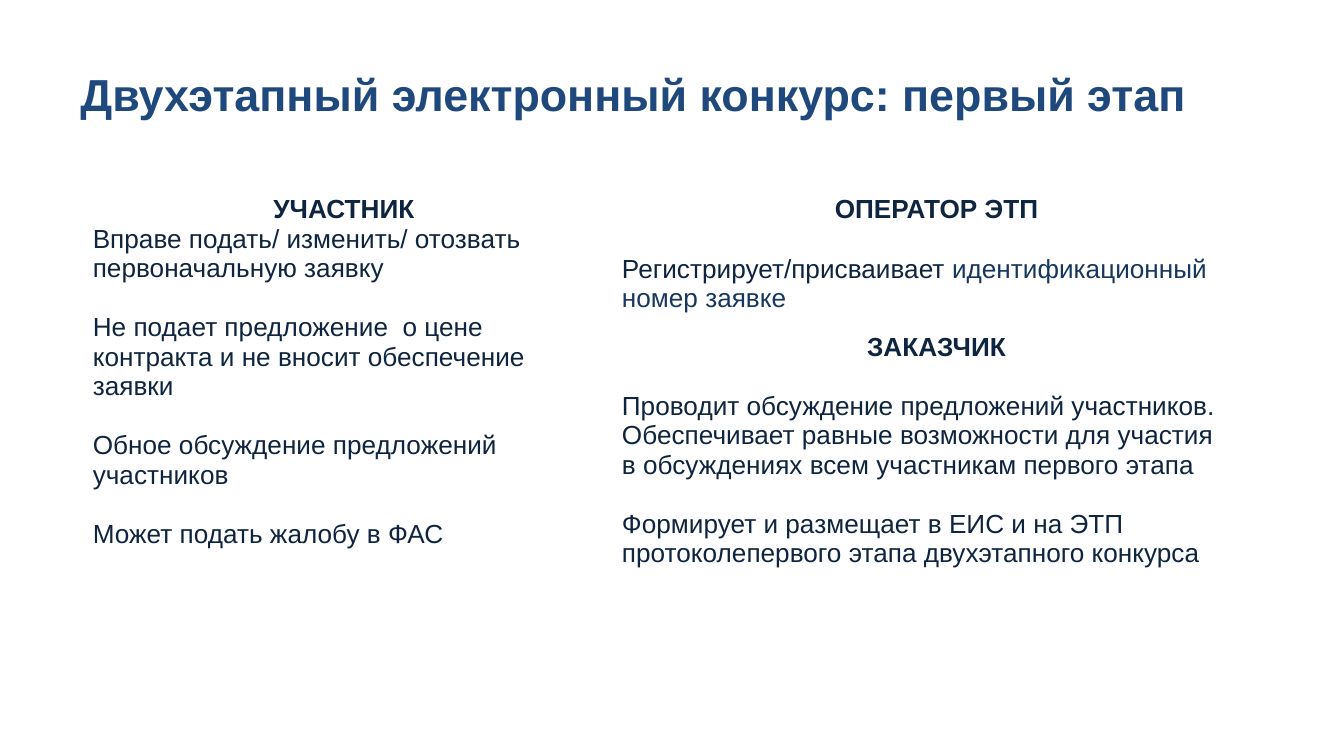
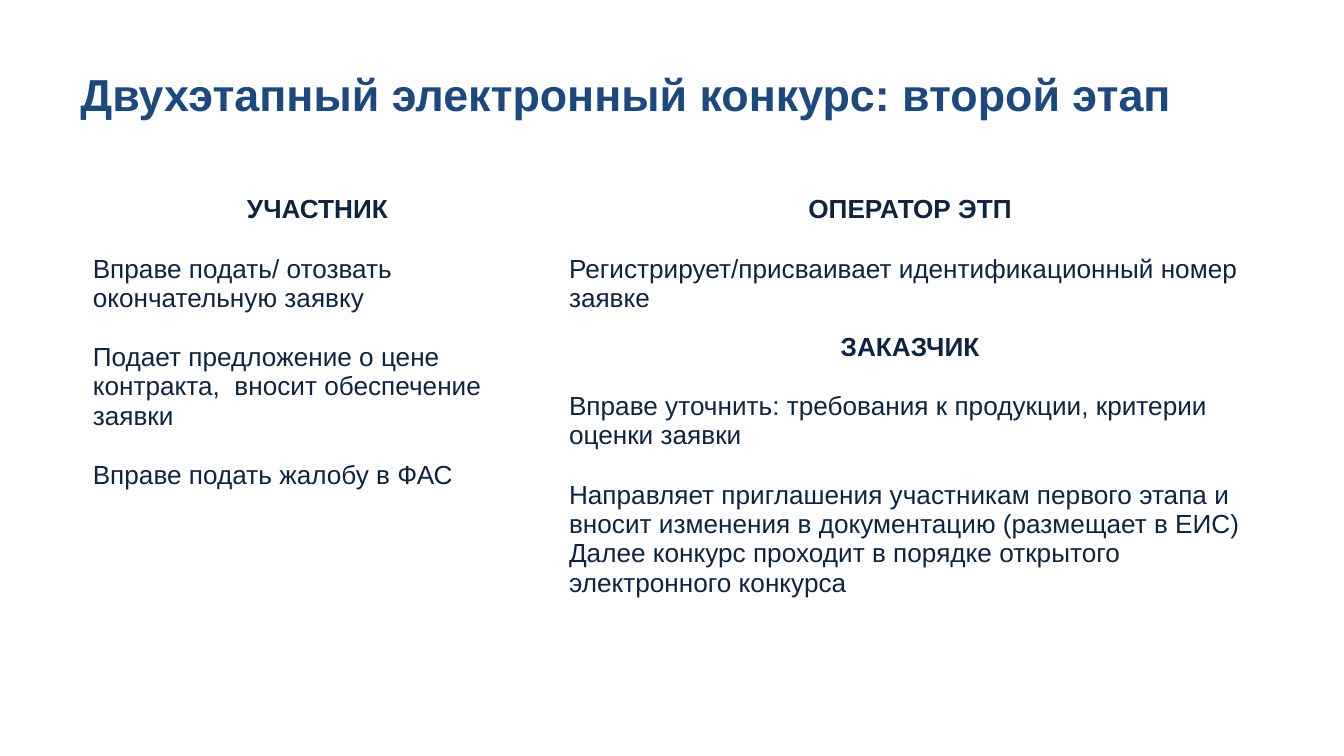
from dataclasses import dataclass

from lxml import etree
from pptx import Presentation
from pptx.dml.color import RGBColor
from pptx.enum.text import MSO_ANCHOR, PP_ALIGN
from pptx.oxml.ns import qn
from pptx.util import Cm, Pt

MIDDLE = MSO_ANCHOR.MIDDLE
LEFT, CENTER = PP_ALIGN.LEFT, PP_ALIGN.CENTER
BLANK_LAYOUT = 6


@dataclass(frozen=True)
class Theme:
    font: str = "Arial"
    title_color: str = "1F497D"
    text_color: str = "0F243E"
    accent_color: str = "17375E"
    cell_color: str = "FFFFFF"
    title_size: int = 24
    text_size: int = 14
    gap: int = 16
    thin_line: int = 1
    thick_line: int = 3


@dataclass(frozen=True)
class Item:
    text: str
    gap: bool = True
    accent: str = ""


@dataclass(frozen=True)
class Role:
    heading: str
    items: tuple


@dataclass(frozen=True)
class Stage:
    title: str
    column_widths: tuple
    row_heights: tuple
    participant: Role
    operator: Role
    customer: Role


THEME = Theme()

STAGES = (
    Stage(
        "Двухэтапный электронный конкурс: первый этап", (10, 12.4), (2.57, 6.25),
        Role("УЧАСТНИК", (
            Item("Вправе подать/ изменить/ отозвать первоначальную заявку", gap=False),
            Item("Не подает предложение  о цене контракта и не вносит обеспечение заявки"),
            Item("Обное обсуждение предложений участников"),
            Item("Может подать жалобу в ФАС"),
        )),
        Role("ОПЕРАТОР ЭТП", (
            Item("Регистрирует/присваивает ", accent="идентификационный номер заявке"),
        )),
        Role("ЗАКАЗЧИК", (
            Item("Проводит обсуждение предложений участников."),
            Item("Обеспечивает равные возможности для участия\v"
                 "в обсуждениях всем участникам первого этапа", gap=False),
            Item("Формирует и размещает в ЕИС и на ЭТП "
                 "протоколепервого этапа двухэтапного конкурса"),
        )),
    ),
    Stage(
        "Двухэтапный электронный конкурс: второй этап", (9, 13.4), (2.44, 5.77),
        Role("УЧАСТНИК", (
            Item("Вправе подать/ отозвать окончательную заявку"),
            Item("Подает предложение о цене контракта,  вносит обеспечение заявки"),
            Item("Вправе подать жалобу в ФАС"),
        )),
        Role("ОПЕРАТОР ЭТП", (
            Item("Регистрирует/присваивает идентификационный номер заявке"),
        )),
        Role("ЗАКАЗЧИК", (
            Item("Вправе уточнить: требования к продукции, критерии оценки заявки"),
            Item("Направляет приглашения участникам первого этапа и вносит "
                 "изменения в документацию (размещает в ЕИС)"),
            Item("Далее конкурс проходит в порядке открытого электронного конкурса",
                 gap=False),
        )),
    ),
)


def style_paragraph(paragraph, size, color, bold, alignment=LEFT):
    paragraph.alignment = alignment
    font = paragraph.font
    font.name, font.size, font.bold = THEME.font, Pt(size), bold
    font.color.rgb = RGBColor.from_string(color)


def add_title(slide, text):
    box = slide.shapes.add_textbox(Cm(1.27), Cm(0.58), Cm(22.86), Cm(2.39))
    frame = box.text_frame
    frame.word_wrap = True
    frame.vertical_anchor = MIDDLE
    frame.text = text
    style_paragraph(frame.paragraphs[0], THEME.title_size, THEME.title_color, True)


def style_cell(cell, bottom_width):
    # Borders come before the fill in the cell properties
    properties = cell._tc.get_or_add_tcPr()
    widths = {"lnL": THEME.thin_line, "lnR": THEME.thin_line,
              "lnT": THEME.thin_line, "lnB": bottom_width}
    for side, width in widths.items():
        line = etree.SubElement(properties, qn(f"a:{side}"), w=str(Pt(width)))
        fill = etree.SubElement(line, qn("a:solidFill"))
        etree.SubElement(fill, qn("a:srgbClr"), val=THEME.cell_color)
    cell.fill.solid()
    cell.fill.fore_color.rgb = RGBColor.from_string(THEME.cell_color)


def fill_role(cell, role, bottom_width):
    style_cell(cell, bottom_width)
    frame = cell.text_frame
    frame.text = role.heading
    style_paragraph(frame.paragraphs[0], THEME.text_size, THEME.text_color, True, CENTER)
    for item in role.items:
        paragraph = frame.add_paragraph()
        paragraph.text = item.text
        style_paragraph(paragraph, THEME.text_size, THEME.text_color, False)
        if item.gap:
            paragraph.space_before = Pt(THEME.gap)
        if item.accent:
            run = paragraph.add_run()
            run.text = item.accent
            run.font.color.rgb = RGBColor.from_string(THEME.accent_color)


def add_roles_table(slide, stage):
    widths, heights = stage.column_widths, stage.row_heights
    frame = slide.shapes.add_table(len(heights), len(widths), Cm(1.5), Cm(3.56),
                                   Cm(sum(widths)), Cm(sum(heights)))
    table = frame.table
    table.first_row = table.horz_banding = False
    for column, width in zip(table.columns, widths):
        column.width = Cm(width)
    for row, height in zip(table.rows, heights):
        row.height = Cm(height)

    # The participant spans both rows of the left column
    table.cell(0, 0).merge(table.cell(1, 0))
    fill_role(table.cell(0, 0), stage.participant, THEME.thick_line)
    fill_role(table.cell(0, 1), stage.operator, THEME.thick_line)
    fill_role(table.cell(1, 1), stage.customer, THEME.thin_line)


def main():
    presentation = Presentation()
    presentation.slide_width, presentation.slide_height = Cm(25.4), Cm(14.29)
    for stage in STAGES:
        slide = presentation.slides.add_slide(presentation.slide_layouts[BLANK_LAYOUT])
        add_title(slide, stage.title)
        add_roles_table(slide, stage)
    presentation.save("out.pptx")


if __name__ == "__main__":
    main()
